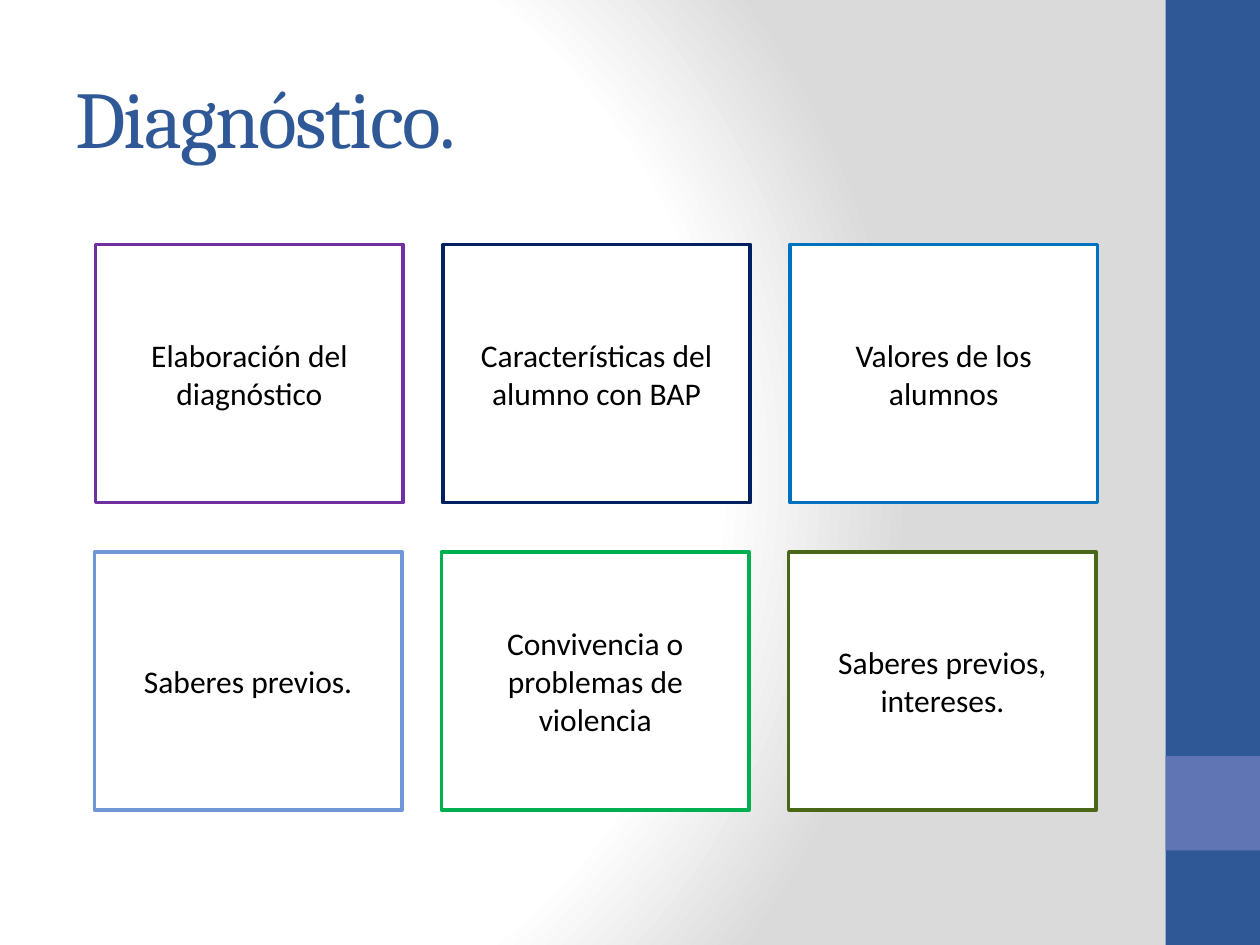
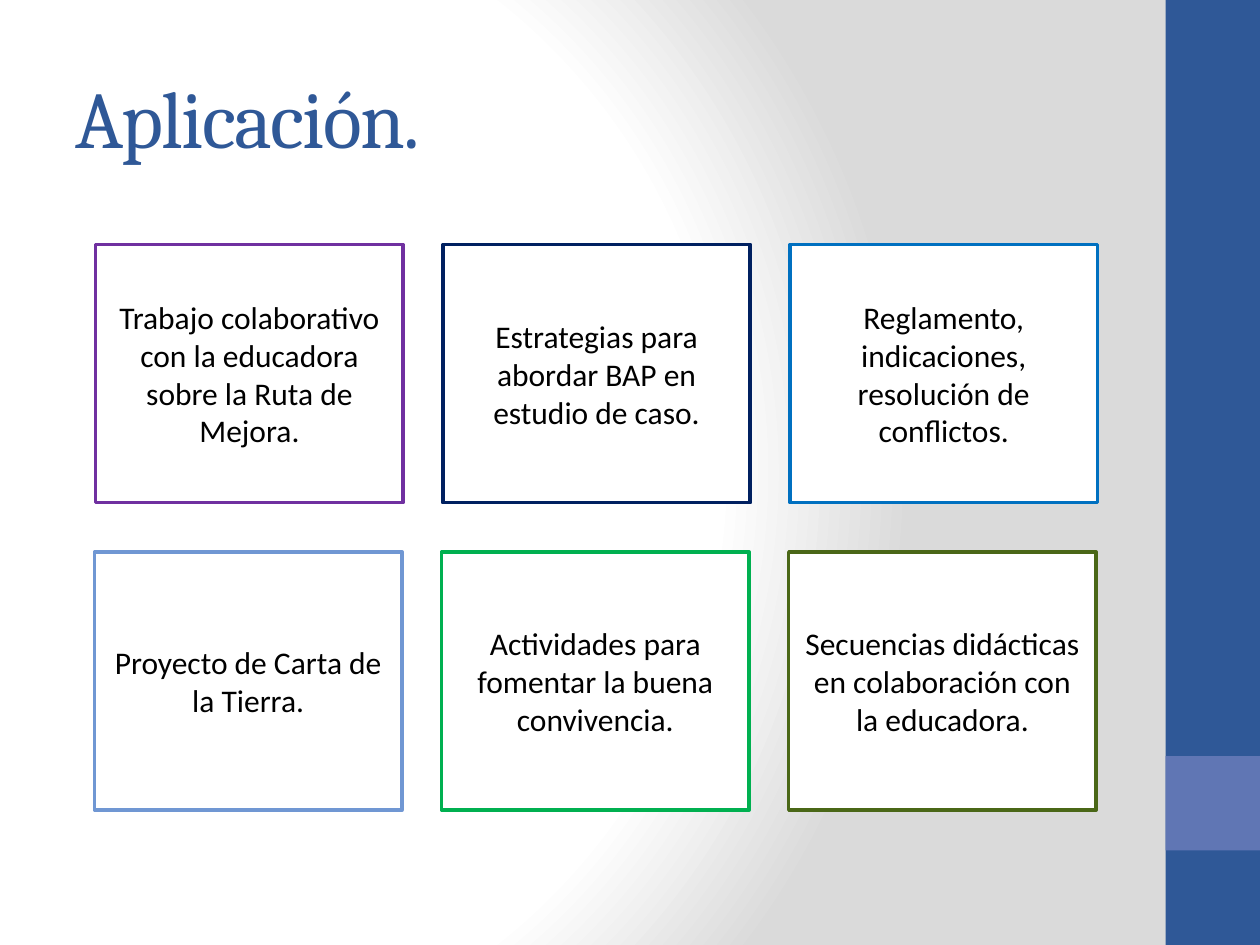
import pptx
import pptx.dml.color
import pptx.enum.shapes
import pptx.enum.text
import pptx.oxml
import pptx.oxml.ns
import pptx.util
from dataclasses import dataclass

Inches = pptx.util.Inches
Pt = pptx.util.Pt

SLIDES = [
    ("Diagnóstico.", [
        "Elaboración del diagnóstico",
        "Características del alumno con BAP",
        "Valores de los alumnos",
        "Saberes previos.",
        "Convivencia o problemas de violencia",
        "Saberes previos, intereses.",
    ]),
    ("Aplicación.", [
        "Trabajo colaborativo con la educadora sobre la Ruta de Mejora.",
        "Estrategias para abordar BAP en estudio de caso.",
        "Reglamento, indicaciones, resolución de conflictos.",
        "Proyecto de Carta de la Tierra.",
        "Actividades para fomentar la buena convivencia.",
        "Secuencias didácticas en colaboración con la educadora.",
    ]),
]


@dataclass(frozen=True)
class Theme:
    blue: str = "2F5897"
    violet: str = "6076B4"
    white: str = "FFFFFF"
    gray: str = "DADADA"
    black: str = "000000"
    card_lines: tuple = ("7030A0", "002060", "0070C0",
                         "7097D3", "00B050", "4A6717")
    title_font: str = "Cambria"
    body_font: str = "Calibri"
    title_size: int = 46
    body_size: int = 18
    card_line_width: int = 2


THEME = Theme()

SLIDE_WIDTH, SLIDE_HEIGHT = 10, 7.5
BAND_WIDTH = 0.75
BAND_LEFT = SLIDE_WIDTH - BAND_WIDTH
ACCENT_TOP = 6
TITLE_AREA = (0.5, 0.3, 8.33, 1.25)

COLUMNS = 3
CARD_WIDTH, CARD_HEIGHT = 2.44, 2.05
CARD_GAP = 0.315
ROW_STARTS = [(0.76, 1.94), (0.75, 4.38)]  # left and top of each row


def color(value):
    return pptx.dml.color.RGBColor.from_string(value)


def paint_background(page):
    """Fill the page with white that fades to gray away from the left."""
    page.background.fill.gradient()
    gradient = page._element.find(".//" + pptx.oxml.ns.qn("a:gradFill"))
    stops = "".join(
        f'<a:gs pos="{percent * 1000}"><a:srgbClr val="{value}"/></a:gs>'
        for percent, value in [(0, THEME.white), (75, THEME.white), (100, THEME.gray)])
    radial = pptx.oxml.parse_xml(
        f'<a:gradFill {pptx.oxml.ns.nsdecls("a")} rotWithShape="1">'
        f'<a:gsLst>{stops}</a:gsLst><a:path path="circle">'
        '<a:fillToRect l="20000" t="50000" r="100000" b="50000"/>'
        '</a:path></a:gradFill>')
    gradient.getparent().replace(gradient, radial)


def add_rectangle(page, area, fill, line=None):
    box = page.shapes.add_shape(
        pptx.enum.shapes.MSO_SHAPE.RECTANGLE, *map(Inches, area))
    box.shadow.inherit = False
    box.fill.solid()
    box.fill.fore_color.rgb = color(fill)
    if line:
        box.line.color.rgb = color(line)
        box.line.width = Pt(THEME.card_line_width)
    else:
        box.line.fill.background()
    return box


def write(box, text, font, size, text_color, alignment):
    """Put one vertically centred paragraph in the box and return its run."""
    frame = box.text_frame
    frame.text = text
    frame.word_wrap = True
    frame.vertical_anchor = pptx.enum.text.MSO_ANCHOR.MIDDLE
    para = frame.paragraphs[0]
    para.alignment = alignment
    span = para.runs[0]
    span.font.name = font
    span.font.size = Pt(size)
    span.font.color.rgb = color(text_color)
    return span


def add_title(page, title):
    box = page.shapes.add_textbox(*map(Inches, TITLE_AREA))
    span = write(box, title, THEME.title_font, THEME.title_size, THEME.blue,
                 pptx.enum.text.PP_ALIGN.LEFT)
    span.font._element.set("spc", "-100")


def add_cards(page, texts):
    for index, (text, line) in enumerate(zip(texts, THEME.card_lines)):
        row, column = divmod(index, COLUMNS)
        row_left, top = ROW_STARTS[row]
        left = row_left + column * (CARD_WIDTH + CARD_GAP)
        card = add_rectangle(page, (left, top, CARD_WIDTH, CARD_HEIGHT),
                             THEME.white, line)
        write(card, text, THEME.body_font, THEME.body_size, THEME.black,
              pptx.enum.text.PP_ALIGN.CENTER)


def add_page(deck, title, texts):
    page = deck.slides.add_slide(deck.slide_layouts[6])
    paint_background(page)
    add_rectangle(page, (BAND_LEFT, 0, BAND_WIDTH, SLIDE_HEIGHT), THEME.blue)
    add_rectangle(page, (BAND_LEFT, ACCENT_TOP, BAND_WIDTH, BAND_WIDTH), THEME.violet)
    add_title(page, title)
    add_cards(page, texts)


def main():
    deck = pptx.Presentation()
    deck.slide_width = Inches(SLIDE_WIDTH)
    deck.slide_height = Inches(SLIDE_HEIGHT)
    for title, texts in SLIDES:
        add_page(deck, title, texts)
    deck.save("out.pptx")


if __name__ == "__main__":
    main()
